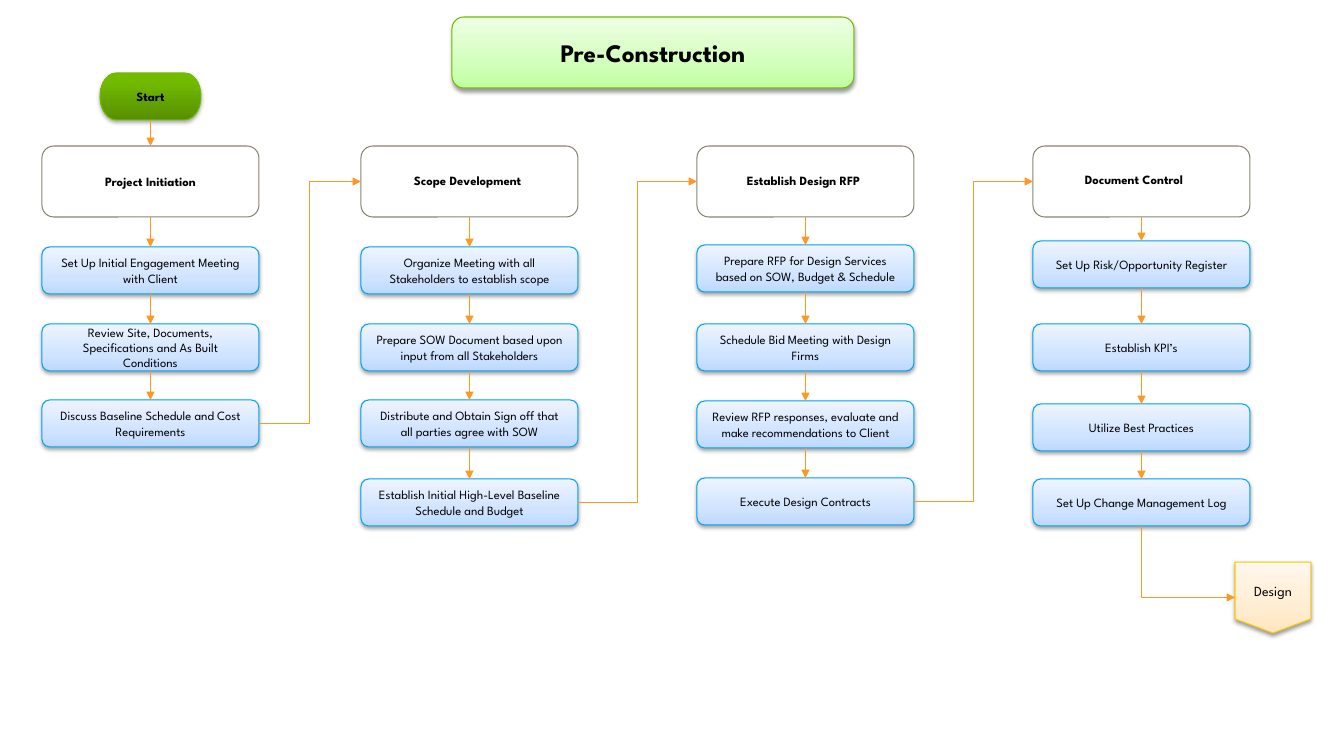
from copy import deepcopy
from dataclasses import dataclass
from itertools import pairwise

from lxml import etree
from pptx import Presentation
from pptx.dml.color import RGBColor
from pptx.enum.shapes import MSO_CONNECTOR, MSO_SHAPE
from pptx.enum.text import MSO_ANCHOR, MSO_AUTO_SIZE, PP_ALIGN
from pptx.oxml.ns import qn
from pptx.util import Emu, Pt

STRAIGHT, ELBOW = MSO_CONNECTOR.STRAIGHT, MSO_CONNECTOR.ELBOW
ROUNDED = MSO_SHAPE.ROUNDED_RECTANGLE
TERMINATOR = MSO_SHAPE.FLOWCHART_TERMINATOR
OFFPAGE = MSO_SHAPE.FLOWCHART_OFFPAGE_CONNECTOR
MIDDLE, CENTER = MSO_ANCHOR.MIDDLE, PP_ALIGN.CENTER
FIT_TEXT = MSO_AUTO_SIZE.SHAPE_TO_FIT_TEXT
TOP, LEFT, BOTTOM, RIGHT = range(4)
EMU_PER_PX = 914400 / 100.8


@dataclass(frozen=True)
class Look:
    """Outline, gradient stops and shadow opacity of one kind of box."""
    line: str
    stops: tuple = ()
    shadow: int = 38


@dataclass(frozen=True)
class Theme:
    """Colours, font and type sizes of the flowchart."""
    font: str = "League Spartan"
    ink: str = "000000"
    arrow: str = "FF9820"
    line_width: float = 0.75
    title_size: int = 18
    body_size: int = 9
    exit_size: int = 10
    title: Look = Look("72BC00", ((0, "C1FFA0"), (0.35, "D2FFBC"), (1, "EEFFE5")))
    start: Look = Look("72BC00", ((0, "578F00"), (0.8, "71BA00"), (1, "72BB00")), 35)
    phase: Look = Look("8B8376")
    step: Look = Look("00A4F9", ((0, "BDD9FF"), (0.35, "D1E4FF"), (1, "EEF4FF")))
    exit: Look = Look("FFC808", ((0, "FFE6BD"), (0.35, "FFEDD1"), (1, "FFF8EE")))


def px(length):
    """Turn pixels into EMU."""
    return Emu(round(length * EMU_PER_PX))


class Flowchart:
    """Draws flowchart elements on one slide in one theme."""

    def __init__(self, slide, theme):
        """Keep the slide and the theme."""
        self.shapes = slide.shapes
        self.theme = theme

    def set_text(self, frame, text, size, bold):
        """Put one styled paragraph into a text frame."""
        frame.text = text
        paragraph = frame.paragraphs[0]
        font = paragraph.font
        font.name, font.size, font.bold = self.theme.font, Pt(size), bold
        font.color.rgb = RGBColor.from_string(self.theme.ink)
        return paragraph

    def shade(self, box, look):
        """Fill a box with its gradient and give it a soft shadow."""
        box.fill.gradient()
        box.fill.gradient_angle = 90
        stop_list = box._element.spPr.find(".//" + qn("a:gsLst"))
        stop_list.append(deepcopy(stop_list[0]))
        for stop, (position, color) in zip(box.fill.gradient_stops, look.stops):
            stop.position = position
            stop.color.rgb = RGBColor.from_string(color)
        effects = box._element.spPr.find(qn("a:effectLst"))
        shadow = etree.SubElement(effects, qn("a:outerShdw"), blurRad=str(Pt(3.1)),
                                  dist=str(Pt(1.6)), dir="5400000", rotWithShape="0")
        color = etree.SubElement(shadow, qn("a:srgbClr"), val=self.theme.ink)
        etree.SubElement(color, qn("a:alpha"), val=str(look.shadow * 1000))

    def box(self, kind, area, look, text="", size=None, bold=False):
        """Add a box with centred text."""
        box = self.shapes.add_shape(kind, *map(px, area))
        box.shadow.inherit = False
        box.line.color.rgb = RGBColor.from_string(look.line)
        box.line.width = Pt(self.theme.line_width)
        if look.stops:
            self.shade(box, look)
        else:
            box.fill.background()
        if text:
            frame = box.text_frame
            frame.word_wrap, frame.vertical_anchor = True, MIDDLE
            paragraph = self.set_text(frame, text, size or self.theme.body_size, bold)
            paragraph.alignment = CENTER
        return box

    def label(self, area, text):
        """Add a bold label that does not wrap."""
        frame = self.shapes.add_textbox(*map(px, area)).text_frame
        frame.word_wrap, frame.auto_size = False, FIT_TEXT
        self.set_text(frame, text, self.theme.body_size, True)

    def arrow(self, source, target, kind=STRAIGHT, sides=(BOTTOM, TOP)):
        """Join two boxes with an arrow."""
        arrow = self.shapes.add_connector(kind, 0, 0, 0, 0)
        arrow.begin_connect(source, sides[0])
        arrow.end_connect(target, sides[1])
        arrow.line.color.rgb = RGBColor.from_string(self.theme.arrow)
        arrow.line.width = Pt(self.theme.line_width)
        properties = arrow._element.spPr
        etree.SubElement(properties.find(qn("a:ln")), qn("a:tailEnd"), type="triangle")
        etree.SubElement(properties, qn("a:effectLst"))
        return arrow

    def corner_arrow(self, source, target):
        """Join two boxes with an arrow that runs down, then right."""
        arrow = self.arrow(source, target, ELBOW, (BOTTOM, LEFT))
        across, down = arrow.width, arrow.height
        arrow.left += (across - down) // 2
        arrow.top += (down - across) // 2
        arrow.width, arrow.height = down, across
        properties = arrow._element.spPr
        properties.find(qn("a:prstGeom")).set("prst", "bentConnector2")
        transform = properties.find(qn("a:xfrm"))
        transform.set("rot", "16200000")
        transform.set("flipH", "1")


PHASES = [
    (42, "Project Initiation", None, [
        (247, "Set Up Initial Engagement Meeting with Client"),
        (324, "Review Site, Documents, Specifications and As Built Conditions"),
        (400, "Discuss Baseline Schedule and Cost Requirements")]),
    (361, "Scope Development", (404, 168, 147, 25), [
        (247, "Organize Meeting with all Stakeholders to establish scope"),
        (324, "Prepare SOW Document based upon input from all Stakeholders"),
        (400, "Distribute and Obtain Sign off that all parties agree with SOW"),
        (479, "Establish Initial High-Level Baseline Schedule and Budget")]),
    (697, "Establish Design RFP", (737, 168, 141, 25), [
        (245, "Prepare RFP for Design Services based on SOW, Budget & Schedule"),
        (324, "Schedule Bid Meeting with Design Firms"),
        (401, "Review RFP responses, evaluate and make recommendations to Client"),
        (478, "Execute Design Contracts")]),
    (1033, "Document Control", (1075, 167, 133, 25), [
        (241, "Set Up Risk/Opportunity Register"),
        (324, "Establish KPI’s"),
        (404, "Utilize Best Practices"),
        (479, "Set Up Change Management Log")]),
]
BOX_WIDTH, STEP_HEIGHT, PHASE_TOP, PHASE_HEIGHT = 217, 47, 146, 71


def main():
    """Build the pre-construction flowchart."""
    deck = Presentation()
    deck.slide_width, deck.slide_height = px(1344), px(756)
    theme = Theme()
    chart = Flowchart(deck.slides.add_slide(deck.slide_layouts[6]), theme)

    chart.box(ROUNDED, (452, 17, 402, 71), theme.title, "Pre-Construction",
              theme.title_size, True)
    previous = chart.box(TERMINATOR, (100, 73, 101, 47), theme.start, "Start", bold=True)
    for left, name, label_area, steps in PHASES:
        phase = chart.box(ROUNDED, (left, PHASE_TOP, BOX_WIDTH, PHASE_HEIGHT), theme.phase,
                          "" if label_area else name, bold=True)
        if label_area:
            chart.label(label_area, name)
            chart.arrow(previous, phase, ELBOW, (RIGHT, LEFT))
        else:
            chart.arrow(previous, phase)
        chain = [phase] + [
            chart.box(ROUNDED, (left, top, BOX_WIDTH, STEP_HEIGHT), theme.step, step)
            for top, step in steps]
        for upper, lower in pairwise(chain):
            chart.arrow(upper, lower)
        previous = chain[-1]

    design = chart.box(OFFPAGE, (1235, 562, 76, 71), theme.exit, "Design", theme.exit_size)
    chart.corner_arrow(previous, design)
    deck.save("out.pptx")


if __name__ == "__main__":
    main()
